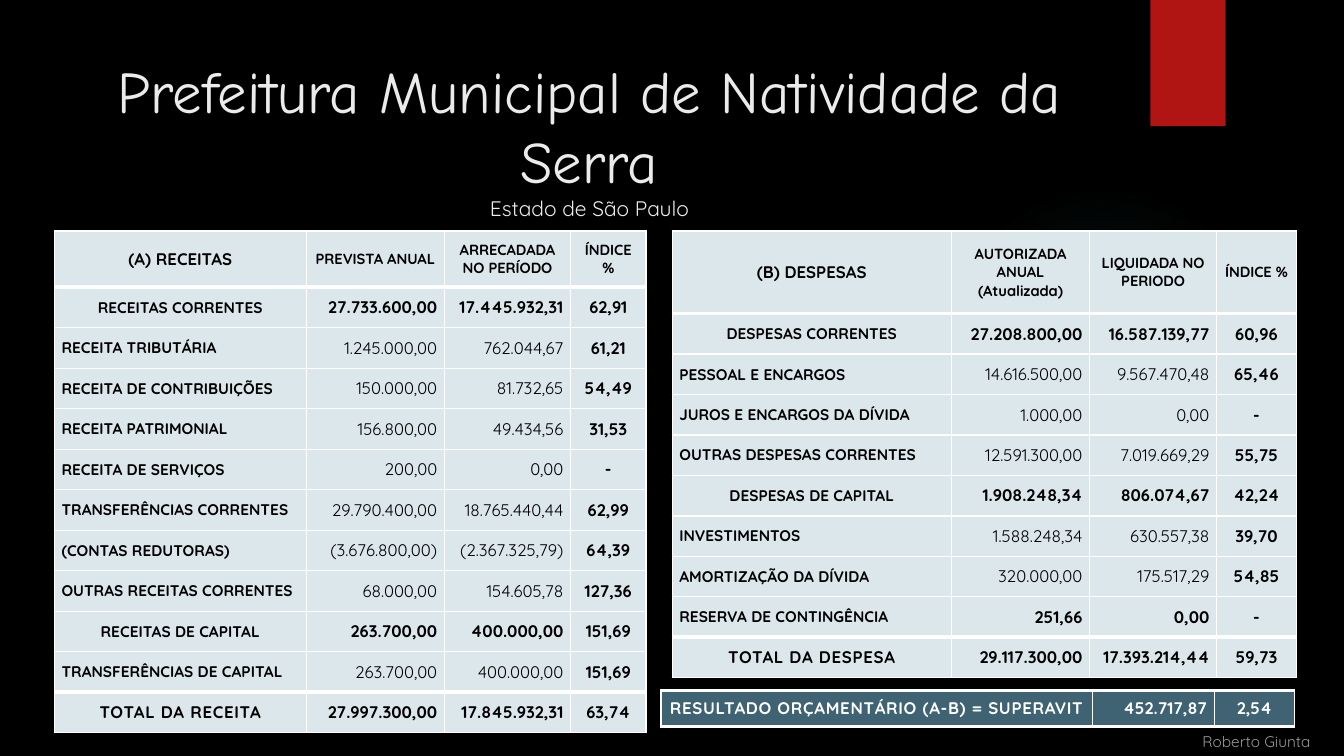
from lxml import etree
from pptx import Presentation
from pptx import util as u
from pptx.dml import color
from pptx.enum import shapes, text
from pptx.oxml import ns, parse_xml

LEFT, CENTER, RIGHT = text.PP_ALIGN.LEFT, text.PP_ALIGN.CENTER, text.PP_ALIGN.RIGHT
BODY_FONT = "Quicksand"
PALE, SLATE, WHITE, BLACK = "DCE7EC", "3F6373", "FFFFFF", "000000"

REVENUE = [
    ("(A) RECEITAS", "PREVISTA ANUAL", "ARRECADADA NO PERÍODO", "ÍNDICE %"),
    ("RECEITAS CORRENTES", "27.733.600,00", "17.445.932,31", "62,91"),
    ("RECEITA TRIBUTÁRIA", "1.245.000,00", "762.044,67", "61,21"),
    ("RECEITA DE CONTRIBUIÇÕES", "150.000,00", "81.732,65", "54,49"),
    ("RECEITA PATRIMONIAL", "156.800,00", "49.434,56", "31,53"),
    ("RECEITA DE SERVIÇOS", "200,00", "0,00", "-"),
    ("TRANSFERÊNCIAS CORRENTES", "29.790.400,00", "18.765.440,44", "62,99"),
    ("(CONTAS REDUTORAS)", "(3.676.800,00)", "(2.367.325,79)", "64,39"),
    ("OUTRAS RECEITAS CORRENTES", "68.000,00", "154.605,78", "127,36"),
    ("RECEITAS DE CAPITAL", "263.700,00", "400.000,00", "151,69"),
    ("TRANSFERÊNCIAS DE CAPITAL", "263.700,00", "400.000,00", "151,69"),
    ("TOTAL DA RECEITA", "27.997.300,00", "17.845.932,31", "63,74"),
]
EXPENSES = [
    ("(B) DESPESAS", "AUTORIZADA\nANUAL (Atualizada)", "LIQUIDADA NO PERIODO", "ÍNDICE %"),
    ("DESPESAS CORRENTES", "27.208.800,00", "16.587.139,77", "60,96"),
    ("PESSOAL E ENCARGOS", "14.616.500,00", "9.567.470,48", "65,46"),
    ("JUROS E ENCARGOS DA DÍVIDA", "1.000,00", "0,00", "-"),
    ("OUTRAS DESPESAS CORRENTES", "12.591.300,00", "7.019.669,29", "55,75"),
    ("DESPESAS DE CAPITAL", "1.908.248,34", "806.074,67", "42,24"),
    ("INVESTIMENTOS", "1.588.248,34", "630.557,38", "39,70"),
    ("AMORTIZAÇÃO DA DÍVIDA", "320.000,00", "175.517,29", "54,85"),
    ("RESERVA DE CONTINGÊNCIA", "251,66", "0,00", "-"),
    ("TOTAL DA DESPESA", "29.117.300,00", "17.393.214,44", "59,73"),
]
RESULT = ("RESULTADO ORÇAMENTÁRIO (A-B) = SUPERAVIT", "452.717,87", "2,54")
SUBTOTALS = {"RECEITAS CORRENTES", "RECEITAS DE CAPITAL", "DESPESAS CORRENTES", "DESPESAS DE CAPITAL"}
BOLD_ITEMS = {"RESERVA DE CONTINGÊNCIA"}


def paint(fill, hex_color):
    fill.solid()
    fill.fore_color.rgb = color.RGBColor.from_string(hex_color)


def add_text(paragraph, content, size=12, font=BODY_FONT, hex_color=BLACK, bold=False,
             align=LEFT, spacing=0, alpha=None):
    paragraph.alignment = align
    run = paragraph.add_run()
    run.text = content
    run.font.size = u.Pt(size)
    run.font.name = font
    run.font.bold = bold
    paint(run.font.fill, hex_color)
    properties = run.font._element
    if spacing:
        properties.set("spc", str(int(spacing * 100)))
    if alpha:
        tint = properties.find(".//" + ns.qn("a:srgbClr"))
        etree.SubElement(tint, ns.qn("a:alpha")).set("val", str(alpha * 1000))


def set_borders(cell, top=1, bottom=1):
    properties = cell._tc.get_or_add_tcPr()
    for side, width in (("L", 1), ("R", 1), ("T", top), ("B", bottom)):
        properties.append(parse_xml(
            f'<a:ln{side} {ns.nsdecls("a")} w="{u.Pt(width)}"><a:solidFill>'
            f'<a:srgbClr val="{WHITE}"/></a:solidFill></a:ln{side}>'))


def fill_cell(cell, content, hex_fill, top=1, bottom=1, **text_format):
    set_borders(cell, top, bottom)
    paint(cell.fill, hex_fill)
    cell.vertical_anchor = text.MSO_ANCHOR.MIDDLE
    cell.margin_left = cell.margin_right = u.Cm(0.18)
    cell.margin_top = cell.margin_bottom = 0
    for index, line in enumerate(content.split("\n")):
        frame = cell.text_frame
        paragraph = frame.add_paragraph() if index else frame.paragraphs[0]
        add_text(paragraph, line, **text_format)


def add_grid(slide, left, top, widths, heights):
    table = slide.shapes.add_table(len(heights), len(widths), u.Cm(left), u.Cm(top),
                                   u.Cm(sum(widths)), u.Cm(sum(heights))).table
    table.first_row = table.horz_banding = False
    for column, width in zip(table.columns, widths):
        column.width = u.Cm(width)
    for row, height in zip(table.rows, heights):
        row.height = u.Cm(height)
    return table


def body_format(label, column, total):
    centered = total or label in SUBTOTALS
    if column == 0:
        return dict(size=12 if total else 11, bold=True, spacing=0.5 if total else 0,
                    align=CENTER if centered else LEFT)
    if column == 3:
        return dict(bold=True, align=CENTER)
    return dict(bold=centered or label in BOLD_ITEMS, align=RIGHT)


def add_budget(slide, left, widths, header_height, rows):
    last = len(rows) - 1
    table = add_grid(slide, left, 5.82, widths, [header_height] + [1.02] * last)
    for row, values in enumerate(rows):
        for column, value in enumerate(values):
            if row == 0:
                text_format = dict(size=10.5 if column else 12, bold=True, align=CENTER)
            else:
                text_format = body_format(values[0], column, row == last)
            fill_cell(table.cell(row, column), value, PALE,
                      top=3 if row in (1, last) else 1,
                      bottom=3 if row in (0, last - 1) else 1, **text_format)


def add_result(slide):
    table = add_grid(slide, 16.66, 17.4, [10.87, 3.07, 2.03], [0.91])
    for column, value in enumerate(RESULT):
        fill_cell(table.cell(0, column), value, SLATE, top=3, bottom=3, hex_color=WHITE,
                  bold=True, align=RIGHT if column == 1 else CENTER,
                  spacing=0 if column else 0.5)


def add_plain_shape(slide, kind, left, top, width, height):
    shape = slide.shapes.add_shape(kind, u.Cm(left), u.Cm(top), u.Cm(width), u.Cm(height))
    shape.shadow.inherit = False
    shape.line.fill.background()
    return shape


def add_glow(slide):
    glow = add_plain_shape(slide, shapes.MSO_SHAPE.OVAL, 23.9, 4.65, 7.82, 7.82)
    stops = "".join(
        f'<a:gs pos="{position}000"><a:srgbClr val="50B9C1"><a:alpha val="{alpha}000"/></a:srgbClr></a:gs>'
        for position, alpha in ((0, 7), (36, 6), (69, 0), (100, 0)))
    glow._element.spPr.find(ns.qn("a:prstGeom")).addnext(parse_xml(
        f'<a:gradFill {ns.nsdecls("a")}><a:gsLst>{stops}</a:gsLst><a:path path="circle">'
        '<a:fillToRect l="50000" t="50000" r="50000" b="50000"/></a:path></a:gradFill>'))


def add_title(slide):
    title = slide.shapes.title
    title.left, title.top, title.width, title.height = map(u.Cm, (1.8, 1.24, 26.11, 3.89))
    frame = title.text_frame
    frame.auto_size = text.MSO_AUTO_SIZE.NONE
    frame.vertical_anchor = text.MSO_ANCHOR.TOP
    paragraph = frame.paragraphs[0]
    add_text(paragraph, "Prefeitura Municipal de Natividade da Serra", size=42,
             font="Comic Neue", hex_color="EBEBEB", align=CENTER)
    paragraph.add_line_break()
    add_text(paragraph, "Estado de São Paulo", size=15, hex_color="EBEBEB", align=CENTER)


def add_author(slide):
    frame = slide.shapes.add_textbox(u.Cm(22.56), u.Cm(18.21), u.Cm(10.72), u.Cm(0.84)).text_frame
    frame.word_wrap = True
    frame.vertical_anchor = text.MSO_ANCHOR.BOTTOM
    add_text(frame.paragraphs[0], "Roberto Giunta", size=11, hex_color=WHITE, align=RIGHT, alpha=60)


def main():
    presentation = Presentation()
    presentation.slide_width, presentation.slide_height = u.Cm(33.87), u.Cm(19.05)
    slide = presentation.slides.add_slide(presentation.slide_layouts[5])
    paint(slide.background.fill, BLACK)
    add_glow(slide)
    ribbon = add_plain_shape(slide, shapes.MSO_SHAPE.RECTANGLE, 28.99, 0, 1.9, 3.18)
    paint(ribbon.fill, "B01513")
    add_budget(slide, 1.37, [6.35, 3.48, 3.18, 1.9], 1.42, REVENUE)
    add_budget(slide, 16.94, [7.04, 3.48, 3.2, 2.01], 2.08, EXPENSES)
    add_result(slide)
    add_author(slide)
    add_title(slide)
    presentation.save("out.pptx")


if __name__ == "__main__":
    main()
